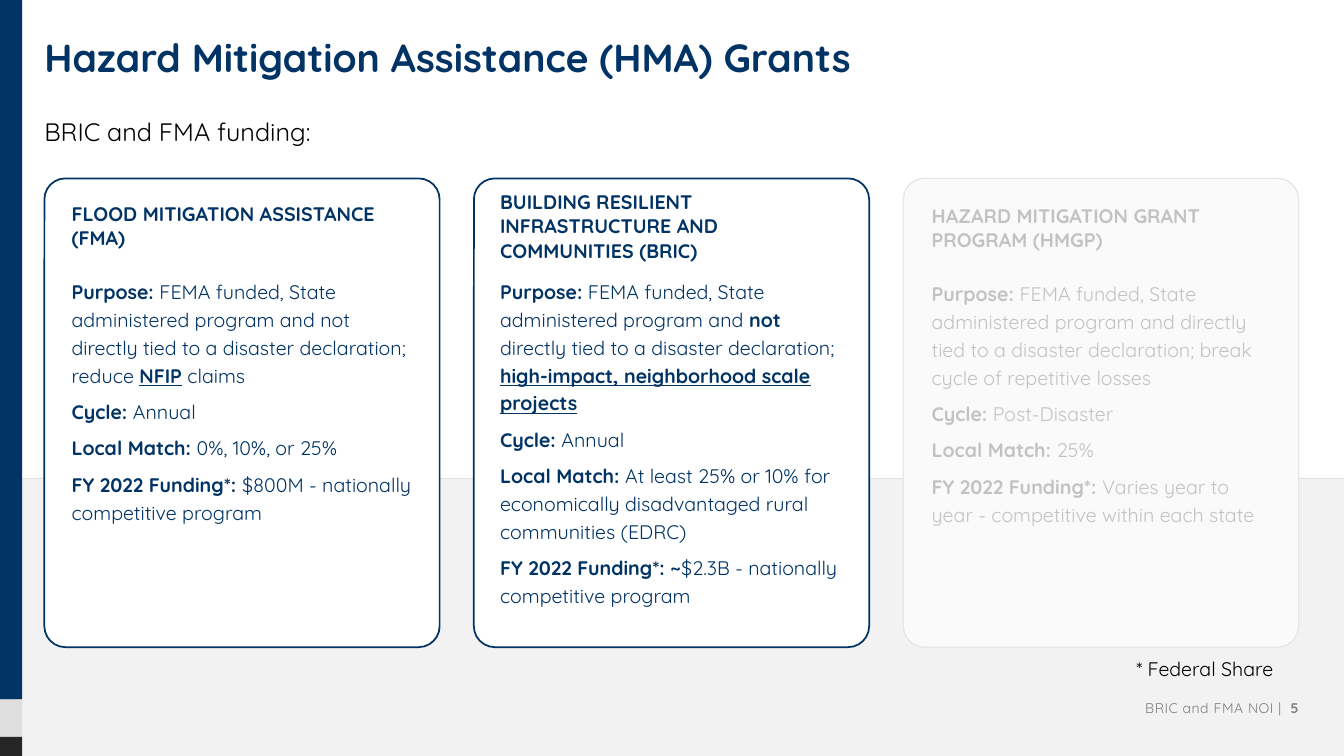
from dataclasses import dataclass

from lxml import etree
from pptx import Presentation
from pptx.dml.color import RGBColor
from pptx.enum.shapes import MSO_CONNECTOR, MSO_SHAPE
from pptx.enum.text import MSO_ANCHOR, PP_ALIGN
from pptx.oxml.ns import qn
from pptx.util import Inches, Pt


@dataclass(frozen=True)
class Theme:
    font: str = "Quicksand"
    navy: str = "013365"
    white: str = "FFFFFF"
    black: str = "000000"
    band: str = "F2F2F2"
    rule: str = "DFDFDF"
    stripe: str = "E0DFE0"
    charcoal: str = "262626"
    muted: str = "A6A6A6"
    muted_line: str = "E6E6E6"
    footer: str = "7F7F7F"
    title_size: int = 28
    lead_size: int = 18
    text_size: int = 14
    footer_size: int = 10


T = Theme()
NO_STYLE_TABLE = "{2D5ABB26-0587-4C30-8999-92F81FD0307C}"
CARD_LEFT, CARD_STEP, CARD_TOP, CARD_W, CARD_H = 0.44, 4.26, 1.77, 3.92, 4.65
TABLE_W, HEAD_H = 3.9, 0.99

# Run styles: plain, bold, bold underlined
PLAIN, BOLD, UNDER = {}, {"bold": True}, {"bold": True, "underline": True}

# Each program: heading, muted, table left and top, body row height, paragraphs of runs
PROGRAMS = [
    ("FLOOD MITIGATION ASSISTANCE (FMA)", False, 0.46, 1.75, 2.77, [
        [("Purpose: ", BOLD),
         ("FEMA funded, State administered program and not directly tied to a "
          "disaster declaration; reduce ", PLAIN),
         ("NFIP", UNDER), (" claims", PLAIN)],
        [("Cycle: ", BOLD), ("Annual", PLAIN)],
        [("Local Match: ", BOLD), ("0%, 10%, or 25%", PLAIN)],
        [("FY 2022 Funding*: ", BOLD),
         ("$800M - nationally competitive program", PLAIN)],
    ]),
    ("BUILDING RESILIENT INFRASTRUCTURE AND COMMUNITIES (BRIC)", False, 4.71, 1.75, 3.17, [
        [("Purpose: ", BOLD),
         ("FEMA funded, State administered program and ", PLAIN), ("not", BOLD),
         (" directly tied to a disaster declaration; ", PLAIN),
         ("high-impact, neighborhood scale projects", UNDER)],
        [("Cycle: ", BOLD), ("Annual", PLAIN)],
        [("Local Match: ", BOLD),
         ("At least 25% or 10% for economically disadvantaged rural "
          "communities (EDRC)", PLAIN)],
        [("FY 2022 Funding*: ~", BOLD),
         ("$2.3B - nationally competitive program", PLAIN)],
    ]),
    ("HAZARD MITIGATION GRANT PROGRAM (HMGP)", True, 8.99, 1.77, 2.79, [
        [("Purpose: ", BOLD),
         ("FEMA funded, State administered program and directly tied to a "
          "disaster declaration; break cycle of repetitive losses", PLAIN)],
        [("Cycle: ", BOLD), ("Post-Disaster", PLAIN)],
        [("Local Match: ", BOLD), ("25%", PLAIN)],
        [("FY 2022 Funding*: ", BOLD),
         ("Varies year to year - competitive within each state", PLAIN)],
    ]),
]


def rgb(value):
    return RGBColor.from_string(value)


def write(tf, paragraphs, *, size, color, align=PP_ALIGN.LEFT, line=1.0, gap=0, tracking=0):
    """Fill a text frame with paragraphs, each a list of (text, style) runs."""
    tf.word_wrap = True
    for i, runs in enumerate(paragraphs):
        p = tf.paragraphs[0] if i == 0 else tf.add_paragraph()
        p.alignment, p.line_spacing = align, line
        p.space_before, p.space_after = Pt(gap if i else 0), Pt(gap)
        for text, style in runs:
            r = p.add_run()
            r.text = text
            r.font.name, r.font.size = T.font, Pt(size)
            r.font.color.rgb = rgb(color)
            r.font.bold = style.get("bold", False)
            r.font.underline = style.get("underline", False)
            if tracking:
                r.font._element.set("spc", str(tracking))


def set_insets(tf):
    tf.margin_left = tf.margin_right = 0
    tf.margin_top = tf.margin_bottom = Inches(0.05)


def add_text(s, x, y, w, h, paragraphs, anchor=MSO_ANCHOR.TOP, **fmt):
    tf = s.shapes.add_textbox(Inches(x), Inches(y), Inches(w), Inches(h)).text_frame
    set_insets(tf)
    tf.vertical_anchor = anchor
    write(tf, paragraphs, **fmt)


def add_box(s, x, y, w, h, fill, kind=MSO_SHAPE.RECTANGLE, line=None, weight=1.0, alpha=None):
    sp = s.shapes.add_shape(kind, Inches(x), Inches(y), Inches(w), Inches(h))
    sp.shadow.inherit = False
    sp.fill.solid()
    sp.fill.fore_color.rgb = rgb(fill)
    if alpha is not None:
        color = sp.fill._xPr.find(qn("a:solidFill"))[0]
        etree.SubElement(color, qn("a:alpha")).set("val", str(alpha * 1000))
    if line:
        sp.line.color.rgb = rgb(line)
        sp.line.width = Pt(weight)
    else:
        sp.line.fill.background()
    return sp


def add_card(s, x, fill, line, weight, alpha=None):
    sp = add_box(s, x, CARD_TOP, CARD_W, CARD_H, fill, MSO_SHAPE.ROUNDED_RECTANGLE,
                 line, weight, alpha)
    sp.adjustments[0] = 0.053


def add_rule(s, y, width):
    line = s.shapes.add_connector(MSO_CONNECTOR.STRAIGHT, 0, Inches(y), width, Inches(y))
    line.line.color.rgb = rgb(T.rule)
    line.line.width = Pt(1)
    etree.SubElement(line._element.spPr, qn("a:effectLst"))


def add_program(s, heading, muted, x, y, body_h, body):
    frame = s.shapes.add_table(2, 1, Inches(x), Inches(y), Inches(TABLE_W),
                               Inches(HEAD_H + body_h))
    table = frame.table
    table.first_row = table.horz_banding = False
    table._tbl.tblPr.find(qn("a:tableStyleId")).text = NO_STYLE_TABLE
    table.rows[0].height, table.rows[1].height = Inches(HEAD_H), Inches(body_h)
    for row in range(2):
        cell = table.cell(row, 0)
        cell.fill.background()
        cell.margin_left = cell.margin_right = Inches(0.25)
        cell.margin_top = cell.margin_bottom = 0
    color = T.muted if muted else T.navy
    head, details = table.cell(0, 0), table.cell(1, 0)
    head.vertical_anchor = MSO_ANCHOR.MIDDLE
    write(head.text_frame, [[(heading, BOLD)]], size=T.text_size, color=color)
    write(details.text_frame, body, size=T.text_size, color=color, line=1.14, gap=3)


def add_title(s, text):
    title = s.shapes.title
    title.left, title.top = Inches(0.44), Inches(0.28)
    title.width, title.height = Inches(12.43), Inches(0.84)
    set_insets(title.text_frame)
    title.text_frame.vertical_anchor = MSO_ANCHOR.TOP
    write(title.text_frame, [[(text, BOLD)]], size=T.title_size, color=T.navy)


def main():
    prs = Presentation()
    prs.slide_width, prs.slide_height = Inches(13.33), Inches(7.5)
    s = prs.slides.add_slide(prs.slide_layouts[5])

    # Lower band and left stripe
    add_box(s, 0, 4.75, 13.33, 2.75, T.band)
    add_rule(s, 4.75, prs.slide_width)
    top = 0
    for height, color in ((6.94, T.navy), (0.37, T.stripe), (0.19, T.charcoal)):
        add_box(s, 0, top, 0.22, height, color)
        top += height

    # Title and lead line
    add_title(s, "Hazard Mitigation Assistance (HMA) Grants")
    add_text(s, 0.44, 1.02, 12.43, 0.6, [[("BRIC and FMA funding:", PLAIN)]],
             size=T.lead_size, color=T.black, line=1.3, gap=3)

    # Program cards
    for i, program in enumerate(PROGRAMS):
        line, weight = (T.muted_line, 0.75) if program[1] else (T.navy, 1.25)
        add_card(s, CARD_LEFT + i * CARD_STEP, T.white, line, weight)
        add_program(s, *program)

    # Footnote, veil over the third card, footer
    add_text(s, 11.27, 6.44, 1.6, 0.35, [[("* Federal Share", PLAIN)]], MSO_ANCHOR.MIDDLE,
             size=T.text_size, color=T.black, line=1.14, gap=3)
    add_card(s, CARD_LEFT + 2 * CARD_STEP, T.band, T.muted_line, 0.75, alpha=38)
    add_text(s, 4.79, 6.88, 8.09, 0.29, [[("BRIC and FMA NOI |  ", PLAIN), ("5", BOLD)]],
             MSO_ANCHOR.MIDDLE, size=T.footer_size, color=T.footer, align=PP_ALIGN.RIGHT,
             tracking=40)

    prs.save("out.pptx")


if __name__ == "__main__":
    main()
